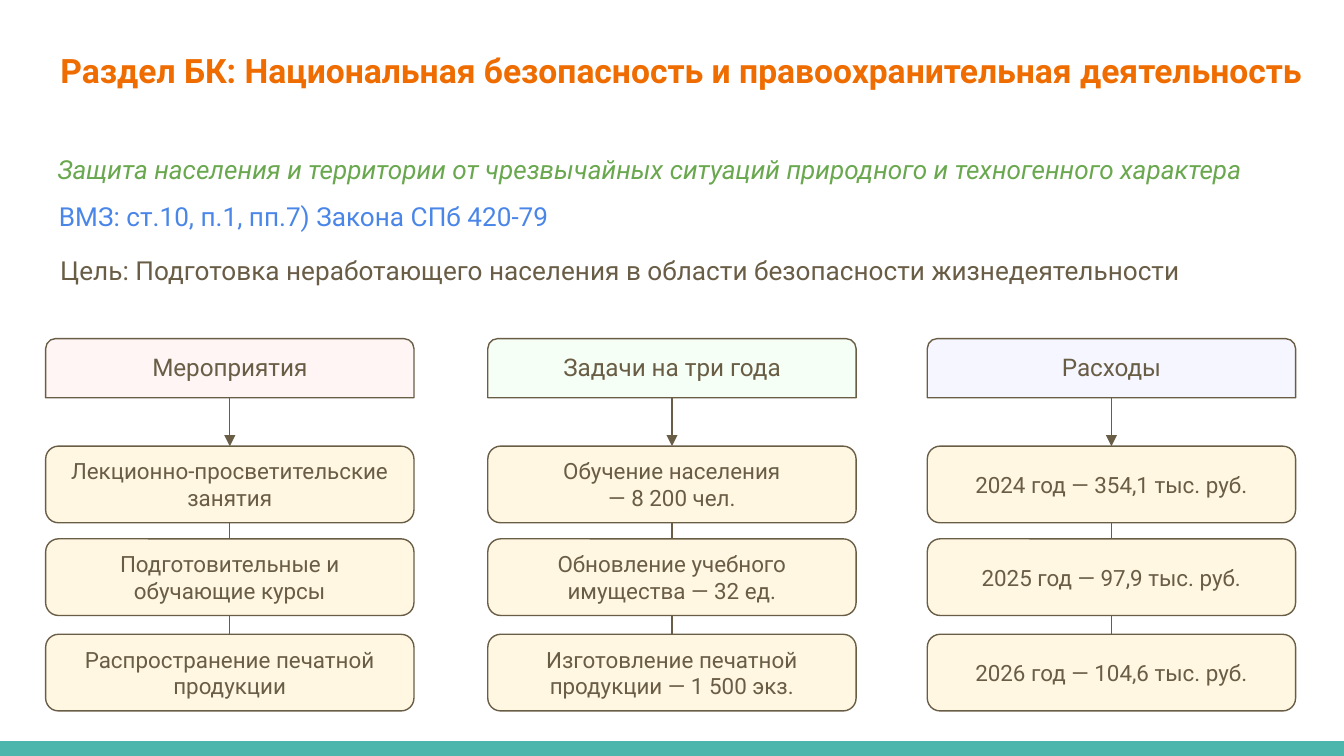
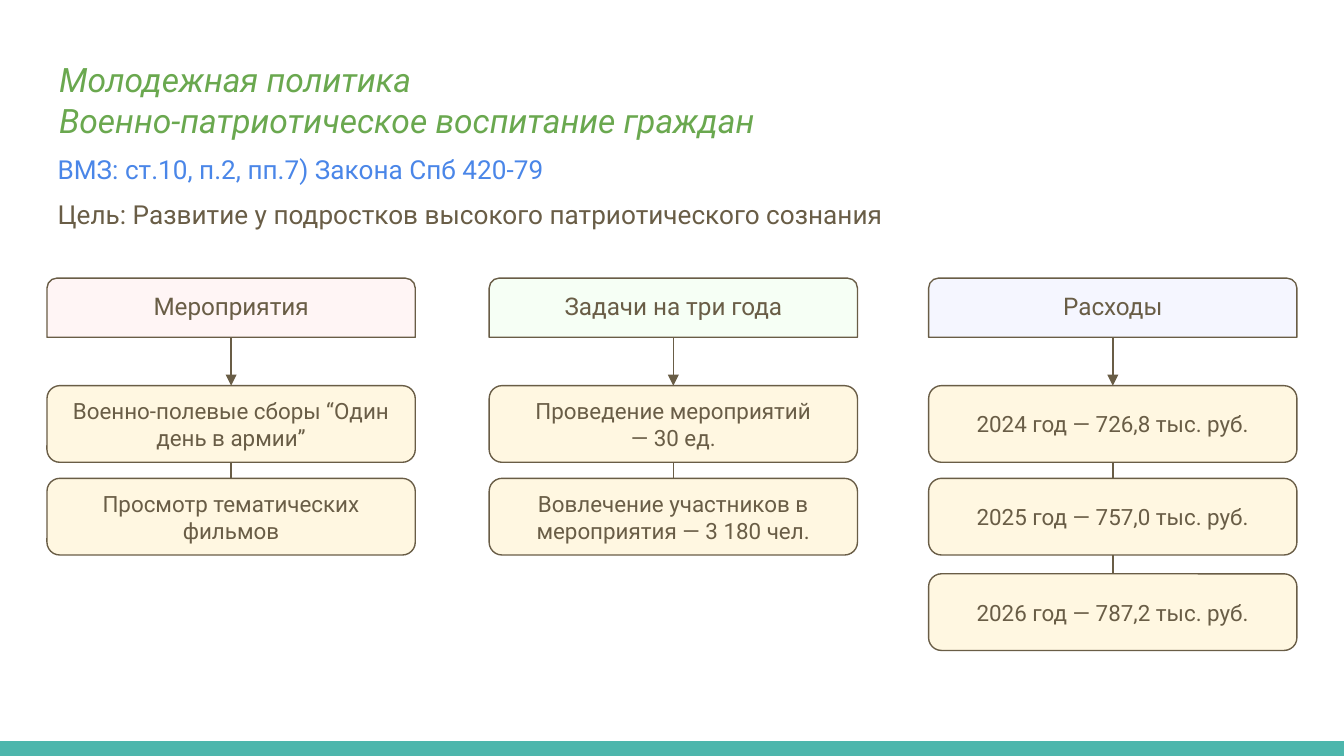
from lxml.etree import SubElement
from pptx import Presentation
from pptx.dml.color import RGBColor
from pptx.enum.shapes import MSO_CONNECTOR, MSO_SHAPE
from pptx.enum.text import MSO_ANCHOR, MSO_AUTO_SIZE, PP_ALIGN
from pptx.oxml.ns import qn
from pptx.util import Inches, Pt

ORANGE = RGBColor(0xEF, 0x6C, 0x00)
GREEN = RGBColor(0x6A, 0xA8, 0x4F)
BLUE = RGBColor(0x4A, 0x86, 0xE8)
BROWN = RGBColor(0x69, 0x5D, 0x46)
TEAL = RGBColor(0x4D, 0xB6, 0xAC)
CREAM = RGBColor(0xFF, 0xF7, 0xE1)
ROSE = RGBColor(0xFF, 0xF5, 0xF5)
MINT = RGBColor(0xF6, 0xFF, 0xF5)
LILAC = RGBColor(0xF5, 0xF6, 0xFF)

FONT = "Roboto"
WIDTH = 10
HEIGHT = WIDTH * 9 / 16
BAND_HEIGHT = 0.11
TEXT_WIDTH = 9.46
LINE_HEIGHT = 0.44
COLUMN_OFFSETS = [0, 3.29, 6.56]
ROW_OFFSETS = [0.8, 1.49, 2.2]
BOX_WIDTH = 2.74
HEADER_HEIGHT = 0.44
BOX_HEIGHT = 0.57
ROUNDING = 0.167

HEADERS = [("Мероприятия", ROSE), ("Задачи на три года", MINT), ("Расходы", LILAC)]

PAGES = [
    {
        "title": "Раздел БК: Национальная безопасность и правоохранительная деятельность",
        "title_style": {"color": ORANGE, "bold": True},
        "title_place": (0.35, 0.23, 0.51, 1.15),
        "lines": [
            ("Защита населения и территории от чрезвычайных ситуаций природного "
             "и техногенного характера", 0.33, 1.04, GREEN, True),
            ("ВМЗ: ст.10, п.1, пп.7) Закона СПб 420-79", 0.34, 1.39, BLUE, False),
            ("Цель: Подготовка неработающего населения в области безопасности "
             "жизнедеятельности", 0.35, 1.79, BROWN, False),
        ],
        "chart_place": (0.34, 2.52),
        "columns": [
            ["Лекционно-просветительские занятия", "Подготовительные и обучающие курсы",
             "Распространение печатной продукции"],
            ["Обучение населения\n— 8 200 чел.", "Обновление учебного имущества — 32 ед.",
             "Изготовление печатной продукции — 1 500 экз."],
            ["2024 год — 354,1 тыс. руб.", "2025 год — 97,9 тыс. руб.",
             "2026 год — 104,6 тыс. руб."],
        ],
    },
    {
        "title": "Молодежная политика\vВоенно-патриотическое воспитание граждан",
        "title_style": {"color": GREEN, "italic": True},
        "title_place": (0.34, 0.34, 0.78, 1.0),
        "lines": [
            ("ВМЗ: ст.10, п.2, пп.7) Закона Спб 420-79", 0.33, 1.04, BLUE, False),
            ("Цель: Развитие у подростков высокого патриотического сознания",
             0.33, 1.38, BROWN, False),
        ],
        "chart_place": (0.35, 2.07),
        "columns": [
            ["Военно-полевые сборы “Один день в армии”", "Просмотр тематических фильмов"],
            ["Проведение мероприятий\n— 30 ед.",
             "Вовлечение участников в мероприятия — 3 180 чел."],
            ["2024 год — 726,8 тыс. руб.", "2025 год — 757,0 тыс. руб.",
             "2026 год — 787,2 тыс. руб."],
        ],
    },
]


def write(frame, text, size, color, bold=False, italic=False,
          align=PP_ALIGN.LEFT, anchor=MSO_ANCHOR.TOP, margins=(0.1, 0.1)):
    frame.text = text
    frame.word_wrap = True
    frame.auto_size = MSO_AUTO_SIZE.NONE
    frame.vertical_anchor = anchor
    frame.margin_left = frame.margin_right = Inches(0.1)
    frame.margin_top, frame.margin_bottom = map(Inches, margins)
    for para in frame.paragraphs:
        para.alignment = align
        font = para.font
        font.name, font.size, font.bold, font.italic = FONT, Pt(size), bold, italic
        font.color.rgb = color


def add_band(page, layout):
    band = page.shapes.add_shape(
        MSO_SHAPE.RECTANGLE, 0, Inches(HEIGHT - BAND_HEIGHT), Inches(WIDTH), Inches(BAND_HEIGHT))
    band.shadow.inherit = False
    band.fill.solid()
    band.fill.fore_color.rgb = TEAL
    band.line.fill.background()
    band.element.nvSpPr.cNvPr.set("id", "20")
    layout.shapes.element.insert(2, band.element)


def add_title(page, content):
    left, top, height, spacing = content["title_place"]
    title = page.shapes.title
    title.left, title.top = Inches(left), Inches(top)
    title.width, title.height = Inches(TEXT_WIDTH), Inches(height)
    write(title.text_frame, content["title"], 18, **content["title_style"])
    title.text_frame.paragraphs[0].line_spacing = spacing


def add_box(page, shape_type, left, top, height, text, size, fill, margins):
    box = page.shapes.add_shape(
        shape_type, Inches(left), Inches(top), Inches(BOX_WIDTH), Inches(height))
    box.adjustments[0] = ROUNDING
    box.shadow.inherit = False
    box.fill.solid()
    box.fill.fore_color.rgb = fill
    box.line.color.rgb = BROWN
    box.line.width = Pt(0.75)
    write(box.text_frame, text, size, BROWN, align=PP_ALIGN.CENTER,
          anchor=MSO_ANCHOR.MIDDLE, margins=margins)
    return box


def join(page, upper, lower, from_header):
    middle = upper.left + upper.width // 2
    link = page.shapes.add_connector(
        MSO_CONNECTOR.STRAIGHT, middle, upper.top + upper.height, middle, lower.top)
    link.end_connect(lower, 0)
    link.line.color.rgb = BROWN
    link.line.width = Pt(0.75)
    if from_header:
        line = link.element.spPr.find(qn("a:ln"))
        SubElement(line, qn("a:tailEnd"), type="triangle")
    else:
        link.begin_connect(upper, 2)
    SubElement(link.element.spPr, qn("a:effectLst"))


def add_column(page, left, top, header, items):
    text, fill = header
    upper = add_box(page, MSO_SHAPE.ROUND_2_SAME_RECTANGLE, left, top, HEADER_HEIGHT,
                    text, 13, fill, margins=(0, 0.05))
    for row, (offset, item) in enumerate(zip(ROW_OFFSETS, items)):
        lower = add_box(page, MSO_SHAPE.ROUNDED_RECTANGLE, left, top + offset, BOX_HEIGHT,
                        item, 12, CREAM, margins=(0, 0))
        join(page, upper, lower, from_header=row == 0)
        upper = lower


def main():
    deck = Presentation()
    deck.slide_width, deck.slide_height = Inches(WIDTH), Inches(HEIGHT)
    layout = deck.slide_layouts[5]
    for number, content in enumerate(PAGES):
        page = deck.slides.add_slide(layout)
        if number == 0:
            add_band(page, layout)
        add_title(page, content)
        for text, left, top, color, italic in content["lines"]:
            box = page.shapes.add_textbox(
                Inches(left), Inches(top), Inches(TEXT_WIDTH), Inches(LINE_HEIGHT))
            write(box.text_frame, text, 14, color, italic=italic)
        left, top = content["chart_place"]
        for offset, header, items in zip(COLUMN_OFFSETS, HEADERS, content["columns"]):
            add_column(page, left + offset, top, header, items)
    deck.save("out.pptx")


if __name__ == "__main__":
    main()
